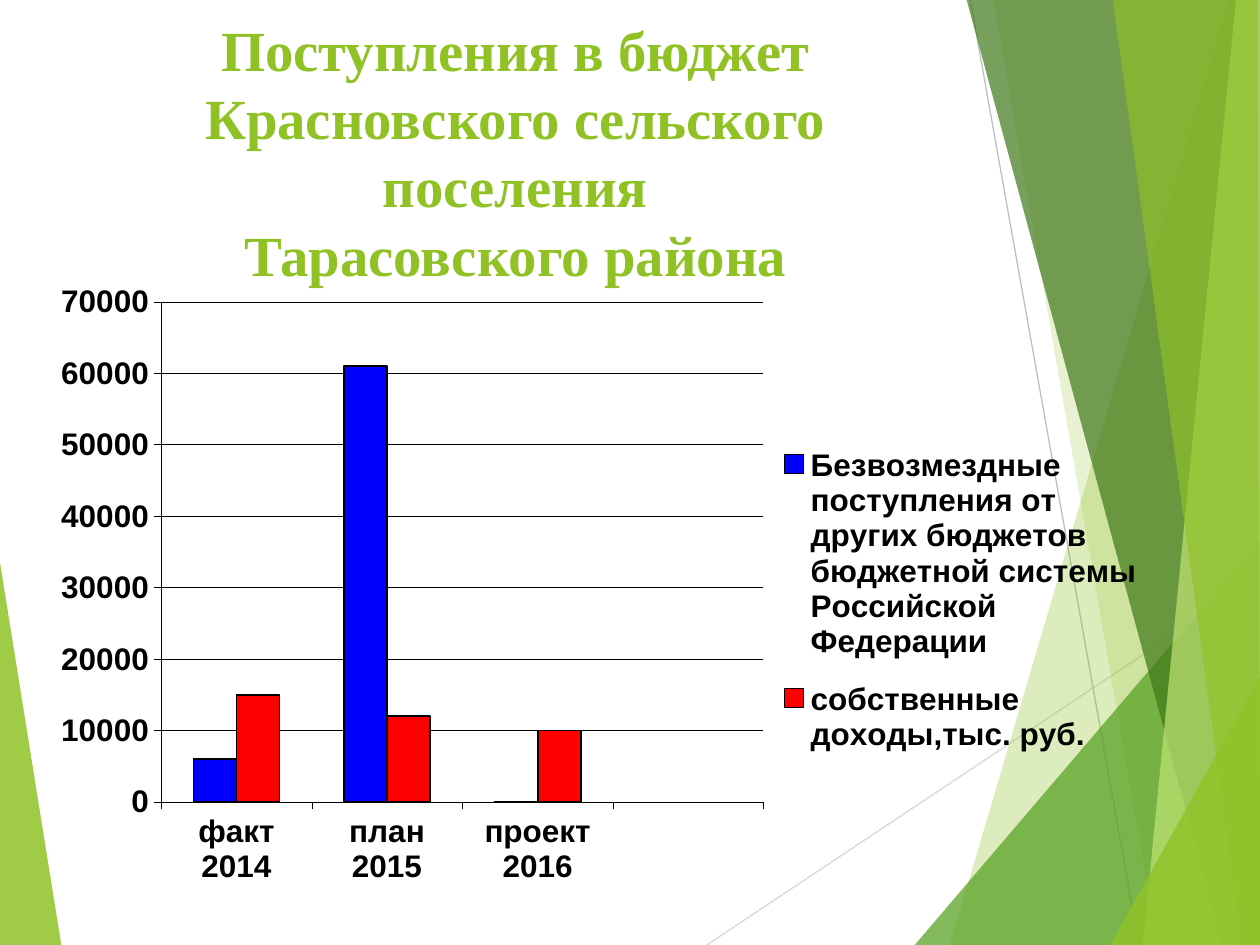
"""Build a slide with a clustered column chart of settlement budget revenues."""
from dataclasses import dataclass
from typing import Any

from lxml.etree import SubElement
from pptx import Presentation
from pptx.chart.data import CategoryChartData
from pptx.dml.color import RGBColor
from pptx.enum.chart import XL_CHART_TYPE, XL_LEGEND_POSITION, XL_TICK_MARK
from pptx.enum.shapes import MSO_CONNECTOR
from pptx.enum.text import MSO_ANCHOR, PP_ALIGN
from pptx.oxml.ns import qn
from pptx.util import Cm, Pt

Point = tuple[float, float]
TOP, BOTTOM, RIGHT = -0.03, 19.05, 25.43


@dataclass
class Facet:
    points: list[Point]
    color: str
    opacity: int


@dataclass
class Ray:
    start: Point
    end: Point
    color: str


@dataclass
class Revenue:
    name: str
    values: list[float | None]
    color: str


LEFT_FACET = Facet([(TOP, 11.15), (1.24, 19.07), (TOP, BOTTOM)], "90C226", 85)
RAYS = [
    Ray((14.25, BOTTOM), (RIGHT, 11.61), "D9D9D9"),
    Ray((19.56, 0), (22.96, BOTTOM), "BFBFBF"),
]
RIGHT_FACETS = [
    Facet([(24.77, 0), (19.15, BOTTOM), (RIGHT, BOTTOM), (RIGHT, 0)], "90C226", 30),
    Facet([(20.02, TOP), (23.34, BOTTOM), (RIGHT, BOTTOM), (RIGHT, TOP)], "90C226", 20),
    Facet([(18.44, BOTTOM), (25.4, 10.9), (RIGHT, BOTTOM)], "54A021", 72),
    Facet([(19.48, TOP), (24.64, BOTTOM), (RIGHT, BOTTOM), (RIGHT, TOP)], "3F7819", 70),
    Facet([(24.92, TOP), (23.04, BOTTOM), (RIGHT, BOTTOM), (25.4, TOP)], "C0E474", 70),
    Facet([(22.43, TOP), (25.04, BOTTOM), (25.4, BOTTOM), (25.35, TOP)], "90C226", 65),
    Facet([(22.38, BOTTOM), (RIGHT, 13.59), (RIGHT, BOTTOM)], "90C226", 80),
]
CATEGORIES = ["факт 2014", "план 2015", "проект 2016", ""]
REVENUES = [
    Revenue("Безвозмездные поступления от других бюджетов бюджетной системы "
            "Российской Федерации", [6000, 61000, 0, None], "0000FF"),
    Revenue("собственные доходы,тыс. руб.", [15000, 12000, 10000, None], "FF0000"),
]
TITLE_FONT = {"name": "Times New Roman", "size": Pt(32.4), "bold": True}
CHART_FONT = {"name": "Arial", "size": Pt(18), "bold": True}


def rgb(color: str) -> RGBColor:
    return RGBColor.from_string(color)


def set_attributes(target: Any, values: dict[str, Any]) -> None:
    for name, value in values.items():
        setattr(target, name, value)


def format_font(font: Any, values: dict[str, Any], color: str) -> None:
    set_attributes(font, values)
    font.color.rgb = rgb(color)


def format_line(line: Any, color: str, width: float) -> None:
    line.color.rgb = rgb(color)
    line.width = Pt(width)


def draw_facet(slide: Any, facet: Facet) -> None:
    corners = [(Cm(x), Cm(y)) for x, y in facet.points]
    builder = slide.shapes.build_freeform(*corners[0])
    builder.add_line_segments(corners[1:], close=True)
    shape = builder.convert_to_shape()
    shape.shadow.inherit = False
    shape.line.fill.background()
    shape.fill.solid()
    shape.fill.fore_color.rgb = rgb(facet.color)
    color_element = shape.element.spPr.find(f".//{qn('a:srgbClr')}")
    SubElement(color_element, qn("a:alpha"), val=str(facet.opacity * 1000))


def draw_ray(slide: Any, ray: Ray) -> None:
    ends = [Cm(value) for value in (*ray.start, *ray.end)]
    connector = slide.shapes.add_connector(MSO_CONNECTOR.STRAIGHT, *ends)
    format_line(connector.line, ray.color, 0.75)
    SubElement(connector.element.spPr, qn("a:effectLst"))


def write_title(slide: Any) -> None:
    title = slide.shapes.title
    set_attributes(title, {"left": Cm(1.7), "top": Cm(0), "width": Cm(17.37), "height": Cm(6.1)})
    set_attributes(title.text_frame, {"word_wrap": True, "vertical_anchor": MSO_ANCHOR.MIDDLE})
    paragraph = title.text_frame.paragraphs[0]
    paragraph.text = "Поступления в бюджет Красновского сельского поселения\vТарасовского района"
    paragraph.alignment = PP_ALIGN.CENTER
    for run in paragraph.runs:
        format_font(run.font, TITLE_FONT, "90C226")
    title.element.getparent().append(title.element)


def place(parent: Any, position: int, values: dict[str, Any]) -> None:
    for old_layout in parent.findall(qn("c:layout")):
        parent.remove(old_layout)
    layout = SubElement(parent, qn("c:layout"))
    parent.insert(position, layout)
    manual = SubElement(layout, qn("c:manualLayout"))
    for name, value in values.items():
        SubElement(manual, qn(f"c:{name}"), val=str(value))


def draw_chart(slide: Any) -> None:
    data = CategoryChartData(number_format="General")
    data.categories = CATEGORIES
    for revenue in REVENUES:
        data.add_series(revenue.name, revenue.values)
    frame = slide.shapes.add_chart(
        XL_CHART_TYPE.COLUMN_CLUSTERED, Cm(0.56), Cm(5.51), Cm(22.61), Cm(12.32), data)
    chart = frame.chart
    set_attributes(chart, {"has_title": False, "has_legend": True})
    format_font(chart.font, CHART_FONT, "000000")
    set_attributes(chart.legend, {"position": XL_LEGEND_POSITION.RIGHT, "include_in_layout": False})
    format_font(chart.legend.font, CHART_FONT, "000000")
    plot = chart.plots[0]
    set_attributes(plot, {"gap_width": 150, "overlap": 0, "vary_by_categories": False})
    for series, revenue in zip(plot.series, REVENUES):
        series.format.fill.solid()
        series.format.fill.fore_color.rgb = rgb(revenue.color)
        format_line(series.format.line, "000000", 1)
    for axis in (chart.category_axis, chart.value_axis):
        axis.major_tick_mark = XL_TICK_MARK.OUTSIDE
        format_line(axis.format.line, "000000", 0.25)
        format_font(axis.tick_labels.font, CHART_FONT, "000000")
    set_attributes(chart.value_axis, {"minimum_scale": 0, "maximum_scale": 70000, "major_unit": 10000})
    format_line(chart.value_axis.major_gridlines.format.line, "000000", 0.25)
    plot_area = chart.element.find(f".//{qn('c:plotArea')}")
    place(plot_area, 0, {"layoutTarget": "inner", "xMode": "edge", "yMode": "edge",
                         "x": 0.119, "y": 0.047, "w": 0.537, "h": 0.826})
    legend = chart.element.find(f".//{qn('c:legend')}")
    place(legend, 1, {"xMode": "edge", "yMode": "edge", "x": 0.67, "y": 0.25, "w": 0.33, "h": 0.58})


def main() -> None:
    presentation = Presentation()
    set_attributes(presentation, {"slide_width": Cm(25.4), "slide_height": Cm(19.05)})
    slide = presentation.slides.add_slide(presentation.slide_layouts[5])
    draw_facet(slide, LEFT_FACET)
    for ray in RAYS:
        draw_ray(slide, ray)
    for facet in RIGHT_FACETS:
        draw_facet(slide, facet)
    write_title(slide)
    draw_chart(slide)
    presentation.save("out.pptx")


if __name__ == "__main__":
    main()
